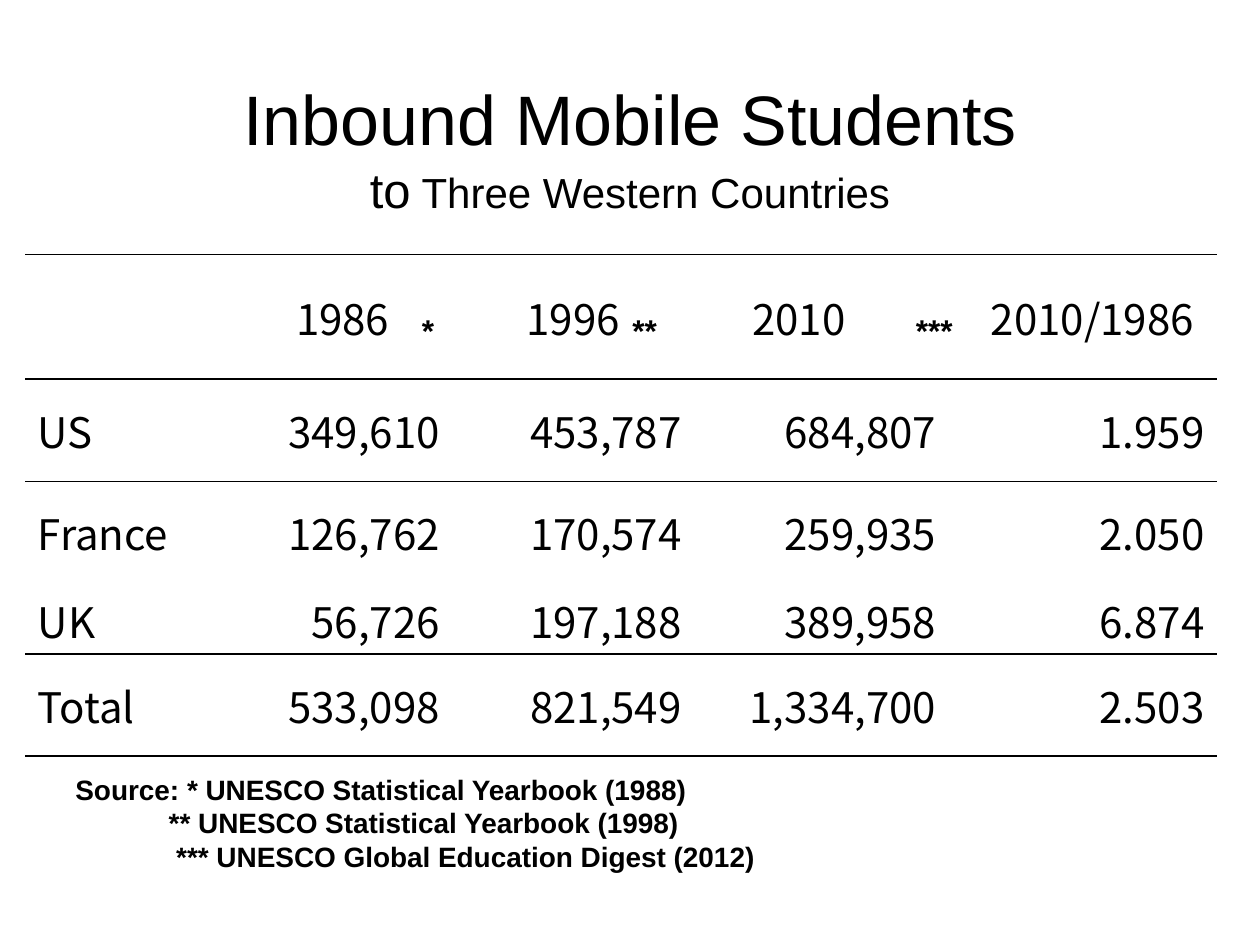
"""Build a slide with a table of inbound mobile students in three countries."""
import pptx
import pptx.dml.color
import pptx.enum.text
import pptx.oxml
import pptx.oxml.ns
import pptx.util
from pptx.util import Inches

BLACK = pptx.dml.color.RGBColor(0, 0, 0)
TEXT_FONT = "Arial"
TABLE_FONT = "Noto Sans CJK JP"
PLAIN_TABLE_STYLE = "{2D5ABB26-0587-4C30-8999-92F81FD0307C}"
ALIGN = pptx.enum.text.PP_ALIGN
ANCHOR = pptx.enum.text.MSO_ANCHOR

COLUMN_WIDTHS = [1.43, 1.96, 1.92, 2.02, 2.13]
ROW_HEIGHTS = [0.99, 0.81, 0.81, 0.56, 0.81]
ROWS = [
    ["", "1986", "1996", "2010", "2010/1986"],
    ["US", "349,610", "453,787", "684,807", "1.959"],
    ["France", "126,762", "170,574", "259,935", "2.050"],
    ["UK", "56,726", "197,188", "389,958", "6.874"],
    ["Total", "533,098", "821,549", "1,334,700", "2.503"],
]
HEADER_MARGINS = [0.1, 0.32, 0.1, 0.46, 0.25]
HEADER_ALIGNMENTS = [ALIGN.LEFT, ALIGN.CENTER, ALIGN.CENTER, ALIGN.LEFT, ALIGN.CENTER]
ROW_BORDERS = {0: ["lnT", "lnB"], 1: ["lnT"], 3: ["lnB"], 4: ["lnT", "lnB"]}
FOOTNOTE_MARKS = [("*", 3.25, 0.3), ("**", 4.92, 0.4), ("***", 7.17, 0.49)]
SOURCES = [
    ("Source: * UNESCO Statistical Yearbook (1988)", 0),
    ("** UNESCO Statistical Yearbook (1998)", 0.74),
    ("*** UNESCO Global Education Digest (2012)", 0.8),
]


def add_text(paragraph, text, size, font=TEXT_FONT, bold=False, align=ALIGN.LEFT, indent=0):
    """Append a formatted run to a paragraph."""
    paragraph.alignment = align
    if indent:
        paragraph._p.get_or_add_pPr().set("marL", str(Inches(indent)))
    run = paragraph.add_run()
    run.text = text
    run.font.size = pptx.util.Pt(size)
    run.font.name = font
    run.font.bold = bold
    run.font.color.rgb = BLACK


def add_text_box(slide, left, top, width, height, wrap=True, anchor=ANCHOR.TOP):
    """Add an empty text box and return its text frame."""
    shape = slide.shapes.add_textbox(Inches(left), Inches(top), Inches(width), Inches(height))
    shape.text_frame.word_wrap = wrap
    shape.text_frame.vertical_anchor = anchor
    return shape.text_frame


def add_title(slide):
    """Add the two-line title."""
    frame = add_text_box(slide, 0.5, 0.3, 9, 1.48, anchor=ANCHOR.BOTTOM)
    paragraph = frame.paragraphs[0]
    add_text(paragraph, "Inbound Mobile Students", 40, align=ALIGN.CENTER)
    paragraph.add_line_break()
    add_text(paragraph, "to", 28, align=ALIGN.CENTER)
    add_text(paragraph, " Three Western Countries", 24, align=ALIGN.CENTER)


def set_borders(cell, sides):
    """Draw thin black lines on the given sides of a cell."""
    properties = cell._tc.get_or_add_tcPr()
    for position, side in enumerate(sides):
        line = pptx.oxml.parse_xml(
            f'<a:{side} {pptx.oxml.ns.nsdecls("a")} w="12700"><a:solidFill>'
            f'<a:srgbClr val="{BLACK}"/></a:solidFill></a:{side}>'
        )
        properties.insert(position, line)


def add_student_table(slide):
    """Add the table of student numbers."""
    frame = slide.shapes.add_table(
        len(ROWS), len(COLUMN_WIDTHS), Inches(0.2), Inches(2.02),
        Inches(sum(COLUMN_WIDTHS)), Inches(sum(ROW_HEIGHTS)),
    )
    table = frame.table
    table.first_row = False
    table.horz_banding = False
    table._tbl.tblPr.find(pptx.oxml.ns.qn("a:tableStyleId")).text = PLAIN_TABLE_STYLE
    for column, width in zip(table.columns, COLUMN_WIDTHS):
        column.width = Inches(width)
    for row_index, values in enumerate(ROWS):
        table.rows[row_index].height = Inches(ROW_HEIGHTS[row_index])
        for column_index, value in enumerate(values):
            cell = table.cell(row_index, column_index)
            cell.fill.background()
            cell.vertical_anchor = ANCHOR.MIDDLE
            align = ALIGN.RIGHT if column_index else ALIGN.LEFT
            if row_index == 0:
                align = HEADER_ALIGNMENTS[column_index]
                cell.margin_left = Inches(HEADER_MARGINS[column_index])
            if value:
                add_text(cell.text_frame.paragraphs[0], value, 24, font=TABLE_FONT, align=align)
            set_borders(cell, ROW_BORDERS.get(row_index, []))


def add_footnotes(slide):
    """Add the header marks and the sources they refer to."""
    for mark, left, width in FOOTNOTE_MARKS:
        frame = add_text_box(slide, left, 2.42, width, 0.4, wrap=False)
        add_text(frame.paragraphs[0], mark, 18, bold=True)
    frame = add_text_box(slide, 0.5, 6.08, 6.15, 1.17)
    for index, (source, indent) in enumerate(SOURCES):
        paragraph = frame.add_paragraph() if index else frame.paragraphs[0]
        add_text(paragraph, source, 16, bold=True, indent=indent)


def main():
    """Create and save the presentation."""
    presentation = pptx.Presentation()
    presentation.slide_width = Inches(10)
    presentation.slide_height = Inches(7.5)
    slide = presentation.slides.add_slide(presentation.slide_layouts[6])
    add_title(slide)
    add_student_table(slide)
    add_footnotes(slide)
    presentation.save("out.pptx")


if __name__ == "__main__":
    main()
